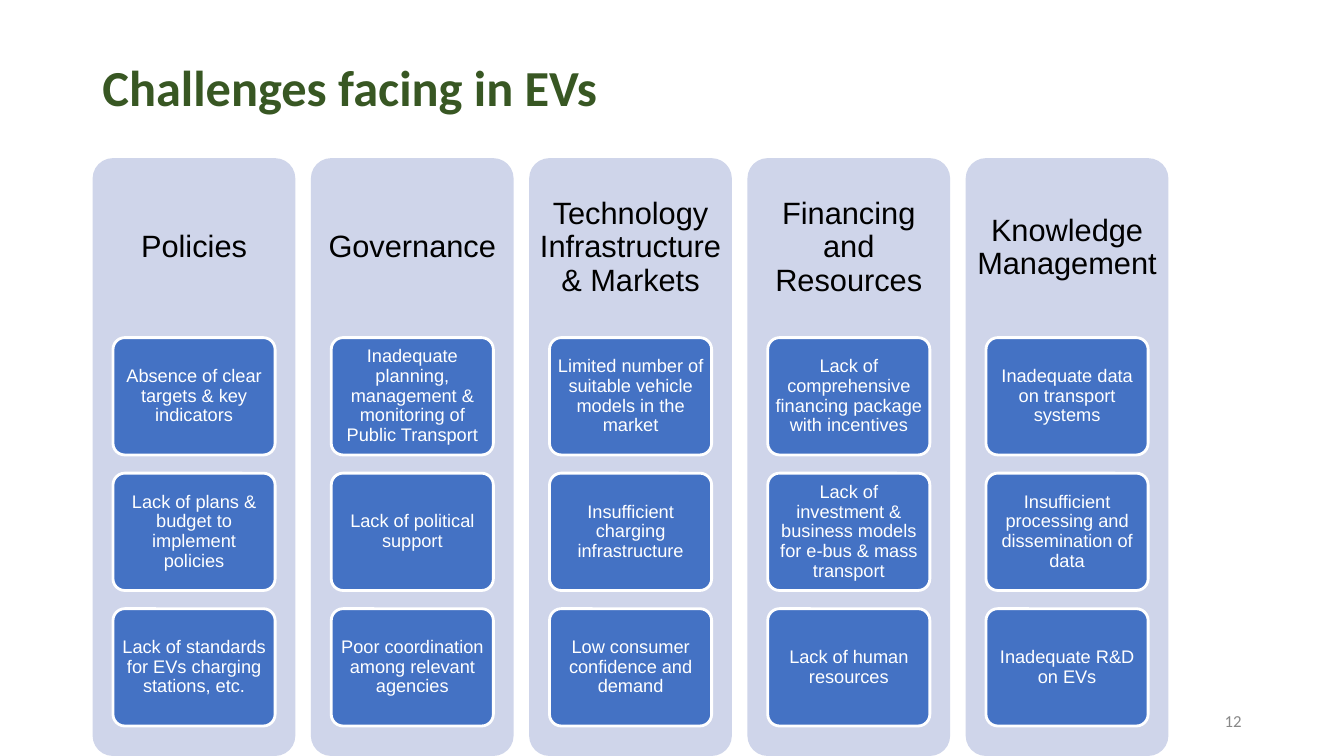
from dataclasses import dataclass

from pptx import Presentation
from pptx.dml.color import RGBColor
from pptx.enum.shapes import MSO_SHAPE
from pptx.enum.text import MSO_ANCHOR, MSO_AUTO_SIZE, PP_ALIGN
from pptx.util import Pt

ROUNDED = MSO_SHAPE.ROUNDED_RECTANGLE
MIDDLE = MSO_ANCHOR.MIDDLE
NO_AUTOFIT = MSO_AUTO_SIZE.NONE
LEFT, CENTER, RIGHT = PP_ALIGN.LEFT, PP_ALIGN.CENTER, PP_ALIGN.RIGHT


@dataclass(frozen=True)
class Theme:
    title_font: str = "Calibri"
    body_font: str = "Arial"
    title_color: str = "385723"
    number_color: str = "888888"
    column_fill: str = "CFD5EA"
    heading_color: str = "000000"
    card_fill: str = "4472C4"
    card_text: str = "FFFFFF"
    title_size: int = 36
    heading_size: int = 22
    card_size: int = 13
    number_size: int = 12


CHALLENGES = [
    ("Policies", [
        "Absence of clear targets & key indicators",
        "Lack of plans & budget to implement policies",
        "Lack of standards for EVs charging stations, etc."]),
    ("Governance", [
        "Inadequate planning, management & monitoring of Public Transport",
        "Lack of political support",
        "Poor coordination among relevant agencies"]),
    ("Technology Infrastructure & Markets", [
        "Limited number of suitable vehicle models in the market",
        "Insufficient charging infrastructure",
        "Low consumer confidence and demand"]),
    ("Financing and Resources", [
        "Lack of comprehensive financing package with incentives",
        "Lack of investment & business models for e-bus & mass transport",
        "Lack of human resources"]),
    ("Knowledge Management", [
        "Inadequate data on transport systems",
        "Insufficient processing and dissemination of data",
        "Inadequate R&D on EVs"]),
]

COLUMN_LEFT, COLUMN_TOP = 66.2, 113
COLUMN_WIDTH, COLUMN_HEIGHT, COLUMN_STEP = 144.8, 427, 155.9
HEADING_HEIGHT = 128.1
CARD_INDENT, CARD_TOP, CARD_STEP = 14.5, 241.2, 96.8
CARD_WIDTH, CARD_HEIGHT = 115.8, 83.8


def set_text(s, text, *, size, color, font, bold=False, align=CENTER,
             spacing=0.9, inset=(7.2, 3.6)):
    tf = s.text_frame
    tf.word_wrap = True
    tf.auto_size = NO_AUTOFIT
    tf.vertical_anchor = MIDDLE
    tf.margin_left = tf.margin_right = Pt(inset[0])
    tf.margin_top = tf.margin_bottom = Pt(inset[1])
    p = tf.paragraphs[0]
    p.alignment = align
    p.line_spacing = spacing
    r = p.add_run()
    r.text = text
    r.font.name = font
    r.font.size = Pt(size)
    r.font.bold = bold
    r.font.color.rgb = RGBColor.from_string(color)


class SlideBuilder:
    def __init__(self, slide, theme):
        self.slide = slide
        self.theme = theme

    def title(self, text, x, y, w, h):
        s = self.slide.shapes.title
        s.left, s.top, s.width, s.height = Pt(x), Pt(y), Pt(w), Pt(h)
        t = self.theme
        set_text(s, text, size=t.title_size, color=t.title_color,
                 font=t.title_font, bold=True, align=LEFT)

    def text(self, text, x, y, w, h, **style):
        s = self.slide.shapes.add_textbox(Pt(x), Pt(y), Pt(w), Pt(h))
        set_text(s, text, **style)

    def panel(self, x, y, w, h, fill, line=None):
        s = self.slide.shapes.add_shape(ROUNDED, Pt(x), Pt(y), Pt(w), Pt(h))
        s.shadow.inherit = False
        s.adjustments[0] = 0.1
        s.fill.solid()
        s.fill.fore_color.rgb = RGBColor.from_string(fill)
        if line:
            s.line.color.rgb = RGBColor.from_string(line)
            s.line.width = Pt(2)
        else:
            s.line.fill.background()
        return s

    def card(self, text, x, y):
        t = self.theme
        s = self.panel(x, y, CARD_WIDTH, CARD_HEIGHT, t.card_fill, t.card_text)
        set_text(s, text, size=t.card_size, color=t.card_text,
                 font=t.body_font, inset=(2.6, 1.95))

    def column(self, heading, cards, x):
        t = self.theme
        self.panel(x, COLUMN_TOP, COLUMN_WIDTH, COLUMN_HEIGHT, t.column_fill)
        self.text(heading, x, COLUMN_TOP, COLUMN_WIDTH, HEADING_HEIGHT,
                  size=t.heading_size, color=t.heading_color,
                  font=t.body_font, inset=(6.6, 6.6))
        for row, card in enumerate(cards):
            self.card(card, x + CARD_INDENT, CARD_TOP + row * CARD_STEP)


def main():
    prs = Presentation()
    prs.slide_width, prs.slide_height = Pt(960), Pt(540)
    theme = Theme()
    builder = SlideBuilder(prs.slides.add_slide(prs.slide_layouts[5]), theme)
    builder.title("Challenges facing in EVs", 66, 28.75, 741, 71)
    for index, (heading, cards) in enumerate(CHALLENGES):
        builder.column(heading, cards, COLUMN_LEFT + index * COLUMN_STEP)
    builder.text("12", 678, 500.5, 216, 28.75, size=theme.number_size,
                 color=theme.number_color, font=theme.title_font,
                 align=RIGHT, spacing=1.0)
    prs.save("out.pptx")


if __name__ == "__main__":
    main()
